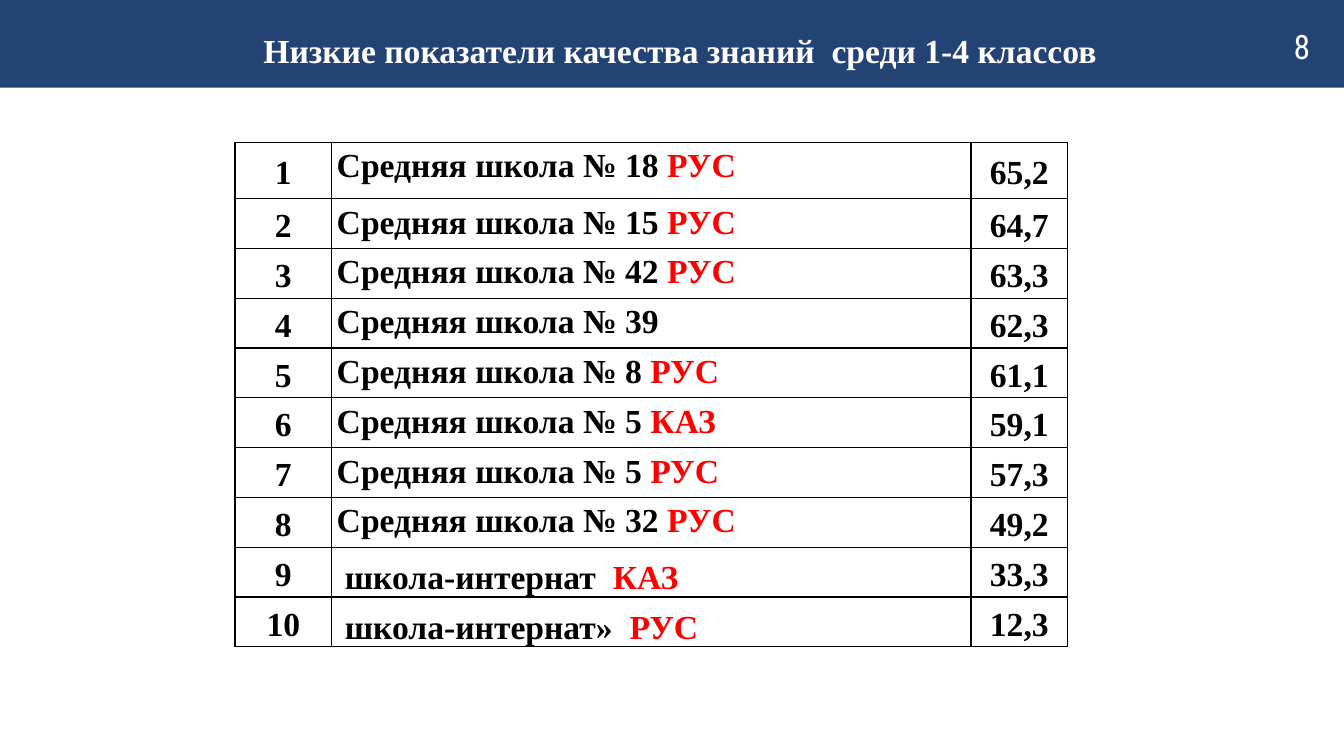
from dataclasses import dataclass
from typing import Any

from lxml.etree import SubElement
from pptx import Presentation
from pptx.dml.color import RGBColor
from pptx.enum.shapes import MSO_SHAPE
from pptx.enum.text import MSO_ANCHOR, MSO_AUTO_SIZE, PP_ALIGN
from pptx.oxml.ns import qn
from pptx.util import Inches, Pt

COLORS = {"band": "244375", "white": "FFFFFF", "ink": "000000", "language": "FF0000"}
SERIF = {"name": "Times New Roman", "size": Pt(24), "bold": True}
CONDENSED = {"name": "Roboto Condensed", "size": Pt(24), "bold": False}
CENTERED = {"alignment": PP_ALIGN.CENTER, "line_spacing": 1.15}
LEFT = {"alignment": PP_ALIGN.LEFT, "line_spacing": 1.15}
CELL_MARGINS = {
    "margin_left": Inches(0.05),
    "margin_right": Inches(0.05),
    "margin_top": 0,
    "margin_bottom": 0,
}
COLUMN_WIDTHS = (0.96, 6.34, 0.96)
TABLE_HEIGHT = 5.01
FIRST_ROW_HEIGHT = 0.56


@dataclass(frozen=True)
class School:
    name: str
    language: str
    quality: str
    boarding: bool = False


SCHOOLS = (
    School("Средняя школа № 18 ", "РУС", "65,2"),
    School("Средняя школа № 15 ", "РУС", "64,7"),
    School("Средняя школа № 42 ", "РУС", "63,3"),
    School("Средняя школа № 39", "", "62,3"),
    School("Средняя школа № 8 ", "РУС", "61,1"),
    School("Средняя школа № 5 ", "КАЗ", "59,1"),
    School("Средняя школа № 5 ", "РУС", "57,3"),
    School("Средняя школа № 32 ", "РУС", "49,2"),
    School("школа-интернат  ", "КАЗ", "33,3", boarding=True),
    School("школа-интернат»  ", "РУС", "12,3", boarding=True),
)


def apply_format(target: Any, values: dict[str, Any]) -> None:
    for attribute, value in values.items():
        setattr(target, attribute, value)


def add_text(paragraph: Any, text: str, font: dict[str, Any], color: str) -> None:
    run = paragraph.add_run()
    run.text = text
    apply_format(run.font, font)
    run.font.color.rgb = RGBColor.from_string(COLORS[color])


def add_borders(cell: Any) -> None:
    properties = cell._tc.get_or_add_tcPr()
    for side in ("a:lnL", "a:lnR", "a:lnT", "a:lnB"):
        border = SubElement(properties, qn(side), w=str(Pt(1)))
        fill = SubElement(border, qn("a:solidFill"))
        SubElement(fill, qn("a:srgbClr"), val=COLORS["ink"])


def fill_cell(
    cell: Any,
    texts: tuple[tuple[str, str], ...],
    layout: dict[str, Any],
    anchor: MSO_ANCHOR,
) -> None:
    apply_format(cell, CELL_MARGINS | {"vertical_anchor": anchor})
    add_borders(cell)
    cell.fill.background()
    paragraph = cell.text_frame.paragraphs[0]
    apply_format(paragraph, layout)
    for text, color in texts:
        if text:
            add_text(paragraph, text, SERIF, color)


def add_header(slide: Any, slide_width: int) -> None:
    title = slide.shapes.title
    band = slide.shapes.add_shape(MSO_SHAPE.RECTANGLE, 0, 0, slide_width, Inches(0.87))
    band.shadow.inherit = False
    band.fill.solid()
    band.fill.fore_color.rgb = RGBColor.from_string(COLORS["band"])
    band.line.fill.background()
    title.element.addprevious(band.element)

    apply_format(title, {
        "left": Inches(0.33),
        "top": Inches(0.25),
        "width": Inches(12.83),
        "height": Inches(0.5),
    })
    apply_format(title.text_frame, {
        "word_wrap": True,
        "vertical_anchor": MSO_ANCHOR.TOP,
        "auto_size": MSO_AUTO_SIZE.SHAPE_TO_FIT_TEXT,
    })
    heading = title.text_frame.paragraphs[0]
    heading.alignment = PP_ALIGN.CENTER
    add_text(heading, "Низкие показатели качества знаний  среди 1-4 классов", SERIF, "white")

    page_number = slide.shapes.add_textbox(
        Inches(12.83), Inches(0.25), Inches(0.33), Inches(0.42)
    )
    apply_format(page_number.text_frame, {
        "word_wrap": True,
        "auto_size": MSO_AUTO_SIZE.SHAPE_TO_FIT_TEXT,
        "margin_left": 0,
        "margin_right": 0,
        "margin_top": Inches(0.01),
        "margin_bottom": 0,
    })
    add_text(page_number.text_frame.paragraphs[0], "8", CONDENSED, "white")


def add_ranking(slide: Any) -> None:
    ranking = slide.shapes.add_table(
        len(SCHOOLS), len(COLUMN_WIDTHS),
        Inches(2.33), Inches(1.41), Inches(sum(COLUMN_WIDTHS)), Inches(TABLE_HEIGHT),
    ).table
    apply_format(ranking, {"first_row": False, "horz_banding": False})
    for column, width in zip(ranking.columns, COLUMN_WIDTHS):
        column.width = Inches(width)

    other_height = (TABLE_HEIGHT - FIRST_ROW_HEIGHT) / (len(SCHOOLS) - 1)
    for place, (row, school) in enumerate(zip(ranking.rows, SCHOOLS), start=1):
        row.height = Inches(FIRST_ROW_HEIGHT if place == 1 else other_height)
        place_cell, name_cell, quality_cell = row.cells
        name_anchor = MSO_ANCHOR.BOTTOM if school.boarding else MSO_ANCHOR.TOP
        fill_cell(place_cell, ((str(place), "ink"),), CENTERED, MSO_ANCHOR.MIDDLE)
        fill_cell(
            name_cell,
            ((school.name, "ink"), (school.language, "language")),
            LEFT,
            name_anchor,
        )
        fill_cell(quality_cell, ((school.quality, "ink"),), CENTERED, MSO_ANCHOR.MIDDLE)
        if school.boarding:
            name_cell.margin_left = Inches(0.13)


def main() -> None:
    presentation = Presentation()
    presentation.slide_width = Inches(13.33)
    presentation.slide_height = Inches(7.5)
    slide = presentation.slides.add_slide(presentation.slide_layouts[5])
    add_header(slide, presentation.slide_width)
    add_ranking(slide)
    presentation.save("out.pptx")


if __name__ == "__main__":
    main()
